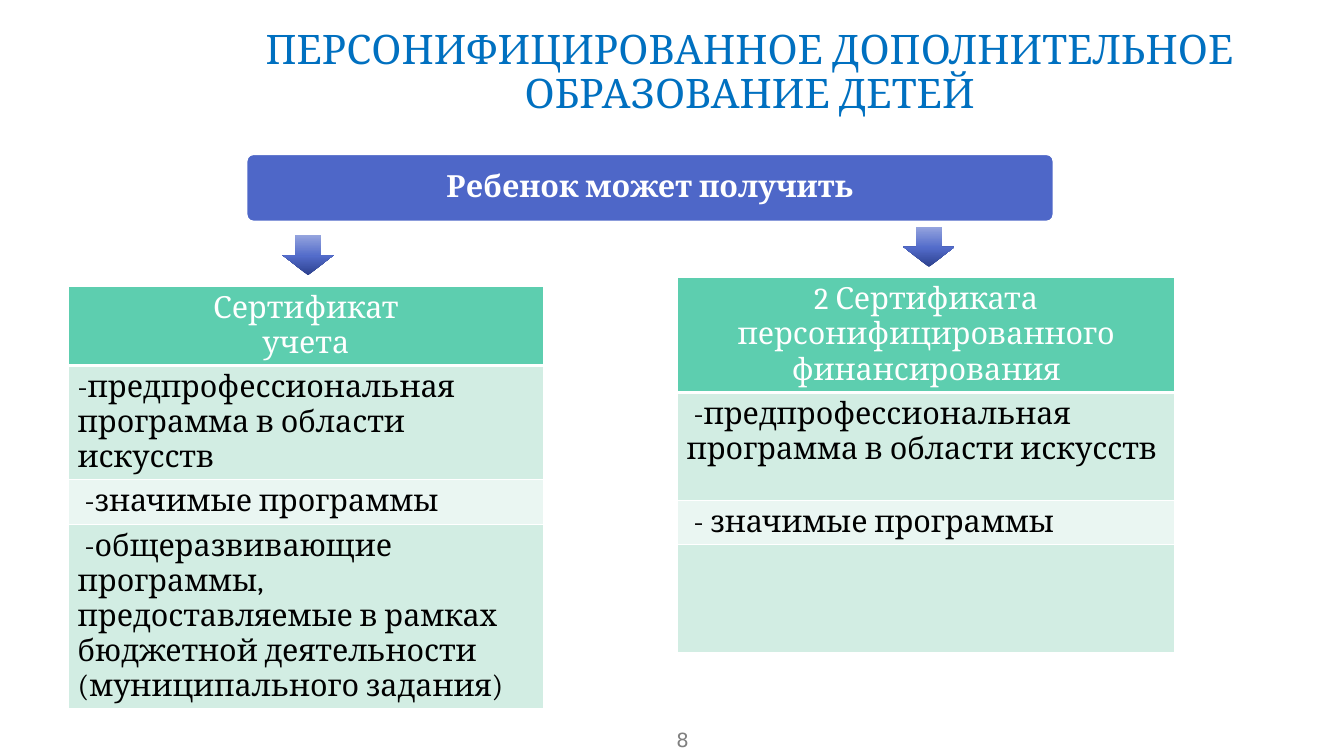
from dataclasses import dataclass

from pptx import Presentation
from pptx.dml.color import RGBColor
from pptx.enum.shapes import MSO_SHAPE as SHAPE
from pptx.enum.text import MSO_ANCHOR as ANCHOR, MSO_AUTO_SIZE as AUTO, PP_ALIGN as ALIGN
from pptx.oxml import parse_xml
from pptx.oxml.ns import nsdecls
from pptx.util import Pt


@dataclass(frozen=True)
class Theme:
    """Colours, fonts and type sizes of the slide."""
    title: str = "0070C0"
    banner: str = "4E67C8"
    header: str = "5DCEAF"
    bands: tuple = ("D2EDE3", "EAF6F2")
    arrow: tuple = ((0, "2C408E"), (48, "536CCA"), (100, "95A4DE"))
    white: str = "FFFFFF"
    black: str = "000000"
    grey: str = "808080"
    font: str = "Cambria"
    number_font: str = "DejaVu Sans"
    title_size: float = 32
    body_size: float = 24
    number_size: float = 15.4


T = Theme()


def rgb(color):
    """Turn a hex string into a colour."""
    return RGBColor.from_string(color)


def format_text(tf, size, color, font=T.font, bold=False, align=ALIGN.CENTER, spacing=None):
    """Format every paragraph and run of a text frame."""
    for p in tf.paragraphs:
        p.alignment = align
        p.line_spacing = spacing
        for r in p.runs:
            r.font.size = Pt(size)
            r.font.name = font
            r.font.bold = bold
            r.font.color.rgb = rgb(color)


def clear_frame(tf, anchor=ANCHOR.TOP):
    """Remove insets and autofit, and wrap the text."""
    tf.margin_left = tf.margin_right = tf.margin_top = tf.margin_bottom = 0
    tf.auto_size = AUTO.NONE
    tf.word_wrap = True
    tf.vertical_anchor = anchor


def set_title(s, text, x, y, w, h):
    """Place and format the title placeholder."""
    sp = s.shapes.title
    sp.left, sp.top, sp.width, sp.height = Pt(x), Pt(y), Pt(w), Pt(h)
    tf = sp.text_frame
    tf.text = text
    clear_frame(tf)
    format_text(tf, T.title_size, T.title, spacing=0.9)
    for p in tf.paragraphs:
        p.space_before = Pt(0)


def add_banner(s, text, x, y, w, h):
    """Add the rounded heading bar."""
    sp = s.shapes.add_shape(SHAPE.ROUNDED_RECTANGLE, Pt(x), Pt(y), Pt(w), Pt(h))
    sp.adjustments[0] = 0.1
    sp.shadow.inherit = False
    sp.fill.solid()
    sp.fill.fore_color.rgb = rgb(T.banner)
    sp.line.color.rgb = rgb(T.white)
    sp.line.width = Pt(1)
    tf = sp.text_frame
    tf.text = text
    clear_frame(tf, ANCHOR.MIDDLE)
    format_text(tf, T.body_size, T.white, bold=True, spacing=0.9)


def add_arrow(s, x, y, w=40.3, h=31.7):
    """Add a down arrow with a vertical gradient."""
    sp = s.shapes.add_shape(SHAPE.DOWN_ARROW, Pt(x), Pt(y), Pt(w), Pt(h))
    stops = "".join(
        f'<a:gs pos="{pos * 1000}"><a:srgbClr val="{color}"/></a:gs>' for pos, color in T.arrow)
    sp.element.spPr.append(parse_xml(
        f'<a:gradFill {nsdecls("a")} rotWithShape="1"><a:gsLst>{stops}</a:gsLst>'
        '<a:lin ang="16200000" scaled="0"/></a:gradFill>'))
    sp.line.fill.background()
    sp.shadow.inherit = False


def style_cell(cell, fill, bottom):
    """Give a cell white borders and a solid fill."""
    tc_pr = cell._tc.get_or_add_tcPr()
    for side, width in (("L", 1), ("R", 1), ("T", 1), ("B", bottom)):
        tc_pr.append(parse_xml(
            f'<a:ln{side} {nsdecls("a")} w="{Pt(width)}"><a:solidFill>'
            f'<a:srgbClr val="{T.white}"/></a:solidFill></a:ln{side}>'))
    cell.fill.solid()
    cell.fill.fore_color.rgb = rgb(fill)


def add_certificate(s, x, y, w, rows):
    """Add a one-column table from (text, height, first-line indent) rows."""
    total = sum(height for _, height, _ in rows)
    table = s.shapes.add_table(len(rows), 1, Pt(x), Pt(y), Pt(w), Pt(total)).table
    for i, (text, height, indent) in enumerate(rows):
        table.rows[i].height = Pt(height)
        cell = table.cell(i, 0)
        cell.text = text
        head = i == 0
        style_cell(cell, T.header if head else T.bands[(i - 1) % 2], 3 if head else 1)
        format_text(cell.text_frame, T.body_size, T.white if head else T.black,
                    align=ALIGN.CENTER if head else ALIGN.LEFT)
        if indent:
            cell.text_frame.paragraphs[0]._p.get_or_add_pPr().set("indent", str(Pt(indent)))


def add_page_number(s, text, x, y, w, h):
    """Add the page number."""
    tf = s.shapes.add_textbox(Pt(x), Pt(y), Pt(w), Pt(h)).text_frame
    tf.text = text
    clear_frame(tf)
    format_text(tf, T.number_size, T.grey, font=T.number_font)


def main():
    """Build the slide and save it."""
    prs = Presentation()
    prs.slide_width, prs.slide_height = Pt(1058.4), Pt(595.44)
    s = prs.slides.add_slide(prs.slide_layouts[5])

    set_title(s, "ПЕРСОНИФИЦИРОВАННОЕ ДОПОЛНИТЕЛЬНОЕ\nОБРАЗОВАНИЕ ДЕТЕЙ", 122.4, 23, 936, 58.3)
    add_banner(s, "Ребенок может получить", 194.4, 121.7, 635, 52.6)

    accounting = [
        ("Сертификат\nучета", 61, 0),
        ("-предпрофессиональная программа в области искусств", 89, 0),
        ("-значимые программы", 34, 5.5),
        ("-общеразвивающие программы, предоставляемые в рамках бюджетной деятельности "
         "(муниципального задания)", 145, 5.5),
    ]
    financing = [
        ("2 Сертификата персонифицированного финансирования", 89, 0),
        ("-предпрофессиональная программа в области искусств", 85, 5.5),
        ("- значимые программы", 34, 5.5),
        ("", 85, 0),
    ]
    for x, y, w, arrow_x, rows in ((54, 225.4, 373.7, 222.5, accounting),
                                   (533.5, 218.9, 391.7, 711.4, financing)):
        add_arrow(s, arrow_x, y - 40.3)
        add_certificate(s, x, y, w, rows)

    add_page_number(s, "8", 513.4, 573.1, 48.2, 22.3)
    prs.save("out.pptx")


if __name__ == "__main__":
    main()
